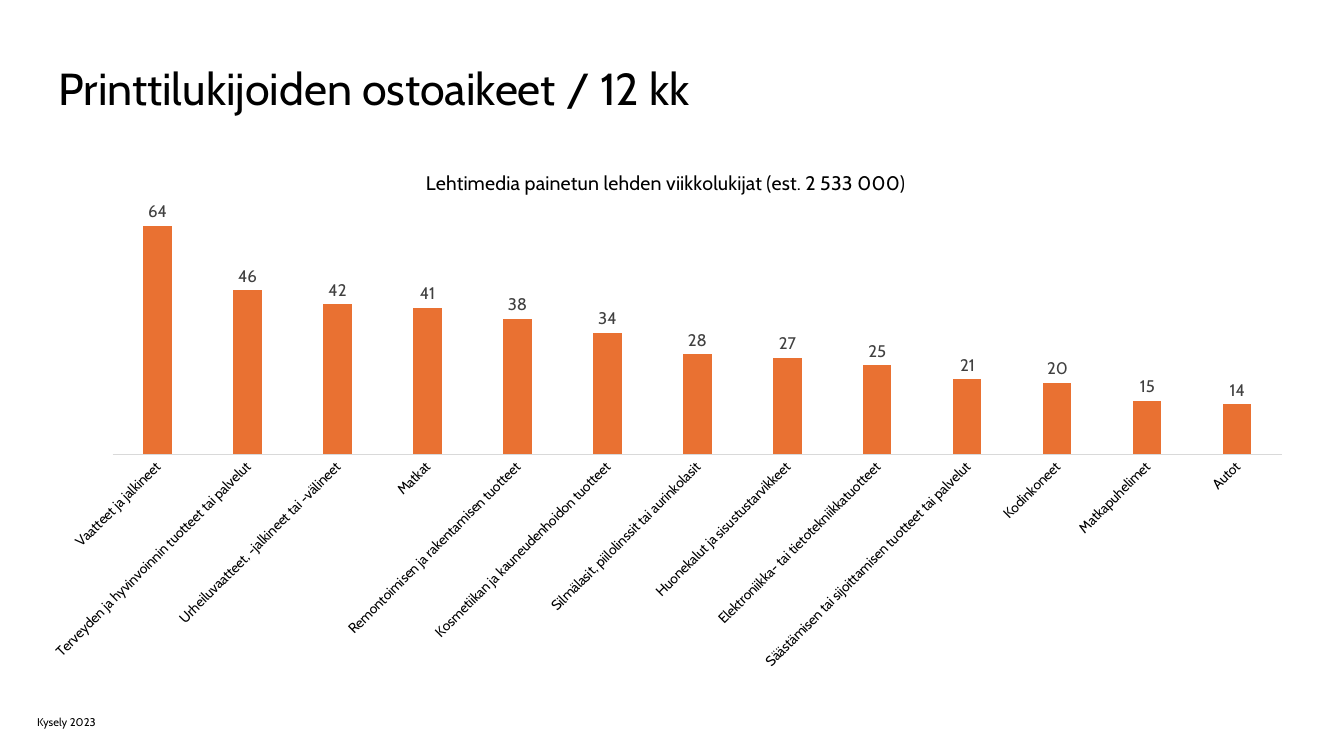
from lxml.etree import SubElement
from pptx import Presentation
from pptx.chart.data import CategoryChartData
from pptx.dml.color import RGBColor
from pptx.enum.chart import XL_CHART_TYPE, XL_LABEL_POSITION, XL_TICK_MARK
from pptx.enum.text import MSO_ANCHOR, PP_ALIGN
from pptx.oxml.ns import qn
from pptx.util import Pt

FONT = "Cabin"
PURCHASE_INTENTS = {
    "Vaatteet ja jalkineet": 64,
    "Terveyden ja hyvinvoinnin tuotteet tai palvelut": 46,
    "Urheiluvaatteet, -jalkineet tai -välineet": 42,
    "Matkat": 41,
    "Remontoimisen ja rakentamisen tuotteet": 38,
    "Kosmetiikan ja kauneudenhoidon tuotteet": 34,
    "Silmälasit, piilolinssit tai aurinkolasit": 28,
    "Huonekalut ja sisustustarvikkeet": 27,
    "Elektroniikka- tai tietotekniikkatuotteet": 25,
    "Säästämisen tai sijoittamisen tuotteet tai palvelut": 21,
    "Kodinkoneet": 20,
    "Matkapuhelimet": 15,
    "Autot": 14,
}


def color(hex_code):
    """Return the colour for a hex string."""
    return RGBColor.from_string(hex_code)


def style_font(font, size, hex_code="000000"):
    """Give a font the slide's typeface, a size and a colour."""
    font.name = FONT
    font.size = Pt(size)
    font.bold = False
    font.color.rgb = color(hex_code)


def write_text(shape, text, size):
    """Fill a shape with one left-aligned, vertically centred line."""
    frame = shape.text_frame
    frame.word_wrap = True
    frame.vertical_anchor = MSO_ANCHOR.MIDDLE
    frame.text = text
    line = frame.paragraphs[0]
    line.alignment = PP_ALIGN.LEFT
    style_font(line.runs[0].font, size)
    return line


def add_heading(slide, text):
    """Place and format the title placeholder."""
    heading = slide.shapes.title
    heading.left, heading.top = Pt(34.5), Pt(36)
    heading.width, heading.height = Pt(890), Pt(58.5)
    write_text(heading, text, 32).line_spacing = 0.9


def add_source_note(slide, text):
    """Add the source note at the bottom left."""
    note = slide.shapes.add_textbox(Pt(19.5), Pt(501), Pt(75.5), Pt(29))
    write_text(note, text, 8)


def place_plot(chart, **fractions):
    """Fix the inner plot area to fractions of the chart's size."""
    plot_area = chart._chartSpace.chart.plotArea
    for old_layout in plot_area.findall(qn("c:layout")):
        plot_area.remove(old_layout)
    layout = plot_area.makeelement(qn("c:layout"))
    plot_area.insert(0, layout)
    manual = SubElement(layout, qn("c:manualLayout"))
    settings = {"layoutTarget": "inner", "xMode": "edge", "yMode": "edge", **fractions}
    for name, value in settings.items():
        SubElement(manual, qn(f"c:{name}")).set("val", str(value))


def format_axes(chart):
    """Slant the category names and hide the value axis."""
    categories = chart.category_axis
    categories.major_tick_mark = XL_TICK_MARK.NONE
    categories.minor_tick_mark = XL_TICK_MARK.NONE
    categories.format.line.color.rgb = color("D9D9D9")
    categories.format.line.width = Pt(0.75)
    style_font(categories.tick_labels.font, 10)
    body = categories._element.find(qn("c:txPr")).find(qn("a:bodyPr"))
    body.set("rot", "-2700000")
    body.set("vert", "horz")
    values = chart.value_axis
    values.minimum_scale, values.maximum_scale = 0, 70
    values.has_major_gridlines = False
    values.visible = False


def format_bars(plot):
    """Colour the bars and put their values above them."""
    plot.gap_width, plot.overlap = 219, -27
    plot.vary_by_categories = False
    bars = plot.series[0]
    bars.format.fill.solid()
    bars.format.fill.fore_color.rgb = color("E97132")
    labels = bars.data_labels
    labels.show_value = True
    labels.position = XL_LABEL_POSITION.OUTSIDE_END
    style_font(labels.font, 12, "404040")


def add_intent_chart(slide, caption):
    """Add the column chart of purchase intents."""
    intents = CategoryChartData()
    intents.categories = list(PURCHASE_INTENTS)
    intents.add_series("Series 1", list(PURCHASE_INTENTS.values()))
    chart = slide.shapes.add_chart(
        XL_CHART_TYPE.COLUMN_CLUSTERED, Pt(26.5), Pt(106.5), Pt(898.5), Pt(396.5), intents
    ).chart
    style_font(chart.font, 10)
    chart.has_legend = False
    chart.has_title = True
    chart.chart_title.include_in_layout = False
    chart.chart_title.text_frame.text = caption
    style_font(chart.chart_title.text_frame.paragraphs[0].runs[0].font, 14)
    format_axes(chart)
    format_bars(chart.plots[0])
    place_plot(chart, x=0.06, y=0.1, w=0.93, h=0.45)


def main():
    """Build and save the slide."""
    deck = Presentation()
    deck.slide_width, deck.slide_height = Pt(960), Pt(540)
    slide = deck.slides.add_slide(deck.slide_layouts[5])
    add_heading(slide, "Printtilukijoiden ostoaikeet / 12 kk")
    add_intent_chart(slide, "Lehtimedia painetun lehden viikkolukijat (est. 2 533 000)")
    add_source_note(slide, "Kysely 2023")
    deck.save("out.pptx")


if __name__ == "__main__":
    main()
